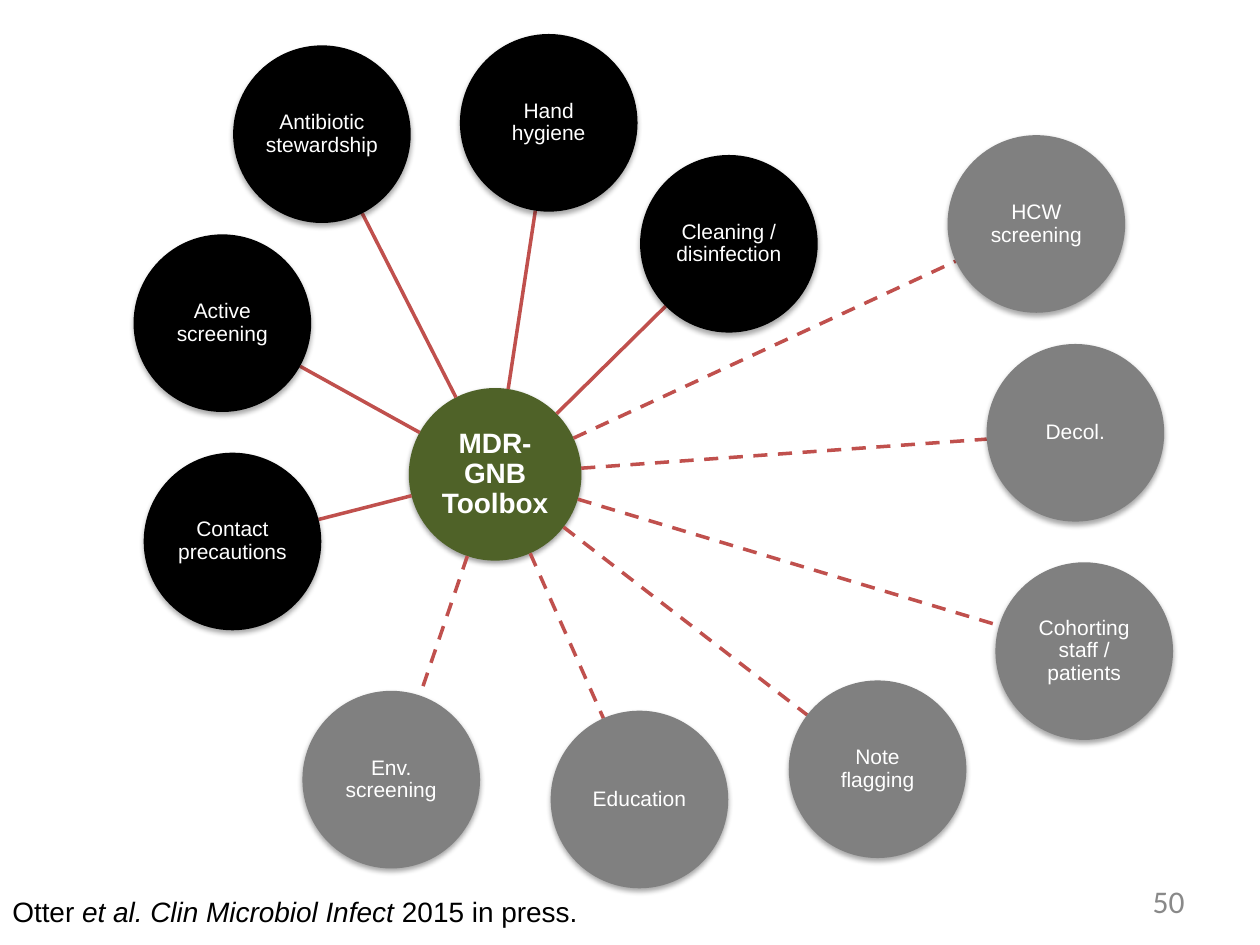
from math import hypot
from pptx import Presentation, util as u
from pptx.dml.color import RGBColor
from pptx.enum import dml, shapes, text
from pptx.oxml import parse_xml
from pptx.oxml.ns import nsdecls

WIDE, HIGH = 10, 7.5

THEME = {
    "hub": "4F6228", "core": "000000", "extra": "808080", "spoke": "C0504D",
    "light": "FFFFFF", "dark": "000000", "muted": "898989",
    "font": "Arial", "number font": "Calibri",
    "title": 16, "label": 12, "note": 16, "number": 18, "line": 2,
}

# Centres are shares of the slide's width and height
HUB = ("MDR-GNB Toolbox", 0.393, 0.502)
CORE = [
    ("Hand hygiene", 0.4355, 0.13),
    ("Cleaning / disinfection", 0.5785, 0.258),
    ("Contact precautions", 0.1845, 0.573),
    ("Active screening", 0.1765, 0.342),
    ("Antibiotic stewardship", 0.2555, 0.142),
]
EXTRA = [
    ("HCW screening", 0.8225, 0.237),
    ("Decol.", 0.8535, 0.458),
    ("Cohorting staff / patients", 0.8605, 0.689),
    ("Note flagging", 0.6965, 0.814),
    ("Education", 0.5075, 0.846),
    ("Env. screening", 0.3105, 0.825),
]
HUB_SIZE, NODE_SIZE = 1.37, 1.41
NOTE = [("Otter ", False), ("et al. Clin Microbiol Infect ", True),
        ("2015 in press.", False)]
PAGE = "50"


def tint(name):
    return RGBColor.from_string(THEME[name])


def write(frame, runs, size, color, font="font", bold=False,
          align=text.PP_ALIGN.LEFT, anchor=text.MSO_ANCHOR.TOP,
          inset=None, space=None):
    """Fill a text frame with (words, italic) runs."""
    frame.word_wrap = True
    frame.vertical_anchor = anchor
    if inset is not None:
        frame.margin_left = frame.margin_right = u.Inches(inset)
        frame.margin_top = frame.margin_bottom = u.Inches(inset)
    para = frame.paragraphs[0]
    para.alignment = align
    para.line_spacing = space
    for words, slant in runs:
        run = para.add_run()
        run.text = words
        face = run.font
        face.name, face.size = THEME[font], u.Pt(THEME[size])
        face.bold, face.italic = bold, slant
        face.color.rgb = tint(color)


def effect(item, inner=""):
    item._element.spPr.append(parse_xml(
        f'<a:effectLst {nsdecls("a")}>{inner}</a:effectLst>'))


def shade(alpha, drop):
    return (f'<a:outerShdw blurRad="{u.Pt(3.1)}" dist="{u.Pt(drop)}" '
            f'dir="5400000" rotWithShape="0"><a:srgbClr val="000000">'
            f'<a:alpha val="{alpha * 1000}"/></a:srgbClr></a:outerShdw>')


def disc(slide, node, wide, fill, size, shadow, bold=False):
    label, x, y = node
    item = slide.shapes.add_shape(
        shapes.MSO_SHAPE.OVAL, u.Inches(x * WIDE - wide / 2),
        u.Inches(y * HIGH - wide / 2), u.Inches(wide), u.Inches(wide))
    item.fill.solid()
    item.fill.fore_color.rgb = tint(fill)
    item.line.fill.background()
    effect(item, shadow)
    write(item.text_frame, [(label, False)], size, "light", bold=bold,
          align=text.PP_ALIGN.CENTER, anchor=text.MSO_ANCHOR.MIDDLE,
          inset=0.01, space=0.9)


def spoke(slide, node, dashed):
    """Join the rim of the hub to the rim of a node."""
    x, y = HUB[1] * WIDE, HUB[2] * HIGH
    dx, dy = node[1] * WIDE - x, node[2] * HIGH - y
    far = hypot(dx, dy)
    start, end = HUB_SIZE / 2 / far, 1 - NODE_SIZE / 2 / far
    line = slide.shapes.add_connector(
        shapes.MSO_CONNECTOR.STRAIGHT,
        *(u.Inches(v) for v in (x + dx * start, y + dy * start,
                                x + dx * end, y + dy * end)))
    line.line.color.rgb = tint("spoke")
    line.line.width = u.Pt(THEME["line"])
    if dashed:
        line.line.dash_style = dml.MSO_LINE.DASH
    effect(line)


def box(slide, x, y, wide, high):
    return slide.shapes.add_textbox(
        *(u.Inches(v) for v in (x, y, wide, high))).text_frame


def main():
    deck = Presentation()
    deck.slide_width, deck.slide_height = u.Inches(WIDE), u.Inches(HIGH)
    slide = deck.slides.add_slide(deck.slide_layouts[6])

    disc(slide, HUB, HUB_SIZE, "hub", "title", shade(38, 1.6), bold=True)
    for group, fill in ((CORE, "core"), (EXTRA, "extra")):
        for node in group:
            spoke(slide, node, dashed=fill == "extra")
            disc(slide, node, NODE_SIZE, fill, "label", shade(35, 1.8))

    write(box(slide, 0, 0.94 * HIGH, 0.84 * WIDE, 0.37), NOTE, "note", "dark")
    write(box(slide, 0.717 * WIDE, 6.95, 0.233 * WIDE, 0.4), [(PAGE, False)],
          "number", "muted", font="number font",
          align=text.PP_ALIGN.RIGHT, anchor=text.MSO_ANCHOR.MIDDLE)
    deck.save("out.pptx")


if __name__ == "__main__":
    main()
